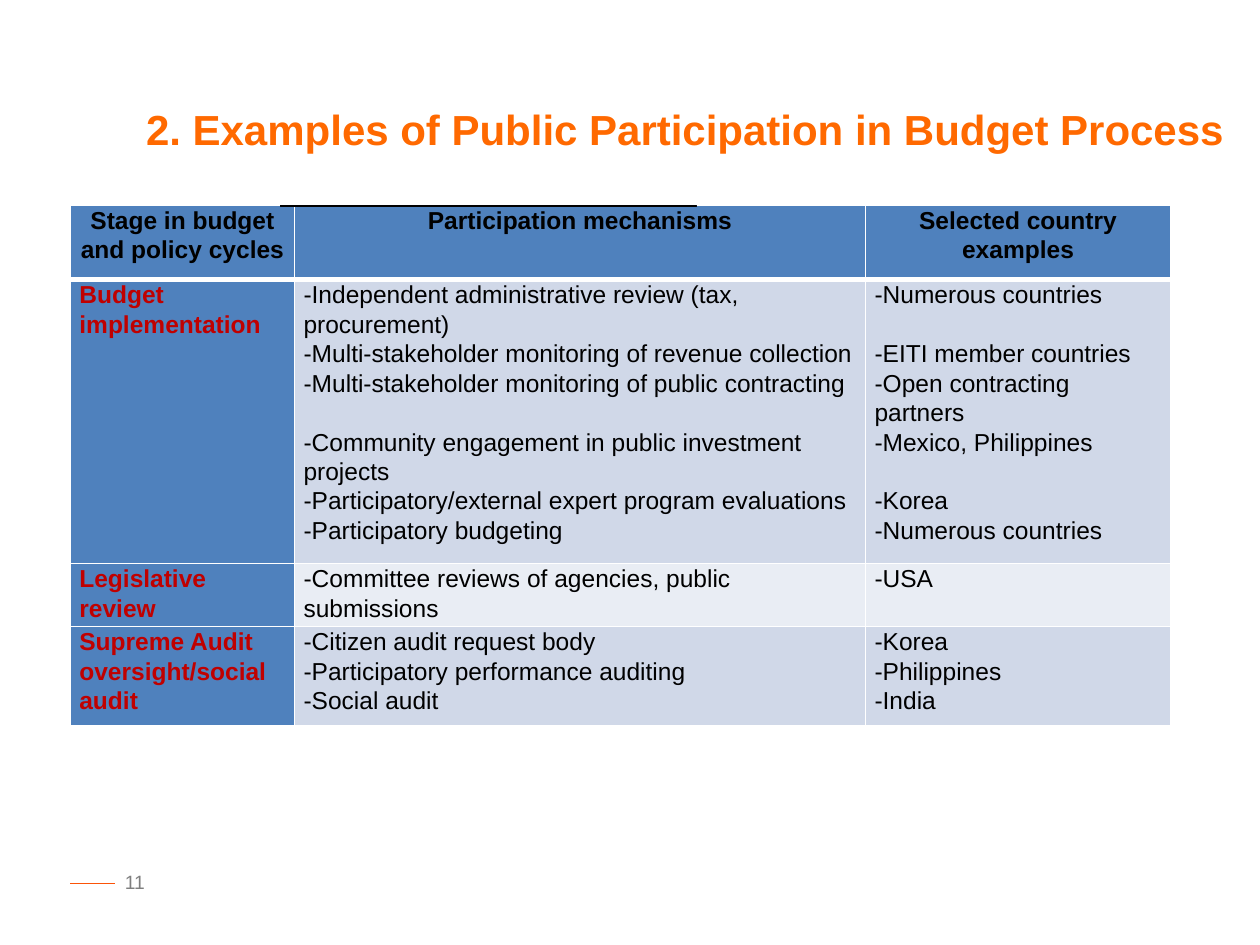
from dataclasses import dataclass

from lxml import etree
from pptx import Presentation
from pptx.dml.color import RGBColor
from pptx.enum.shapes import MSO_CONNECTOR, MSO_SHAPE
from pptx.enum.text import MSO_ANCHOR, MSO_AUTO_SIZE, PP_ALIGN
from pptx.oxml.ns import qn
from pptx.util import Cm, Pt

LEFT, CENTER, RIGHT = PP_ALIGN.LEFT, PP_ALIGN.CENTER, PP_ALIGN.RIGHT
TOP = MSO_ANCHOR.TOP
NO_AUTOFIT = MSO_AUTO_SIZE.NONE
STRAIGHT = MSO_CONNECTOR.STRAIGHT
RECTANGLE = MSO_SHAPE.RECTANGLE
TITLE_ONLY_LAYOUT = 5


@dataclass(frozen=True)
class Theme:
    font: str = "Arial"
    title_size: float = 24
    table_size: float = 14
    number_size: float = 11
    line_spacing: float = 1.07
    line_gap: float = 16.8  # height of one table text line
    title: str = "FF6900"
    accent: str = "FB5308"
    number: str = "7F7F7F"
    text: str = "000000"
    stage: str = "C00000"
    header_fill: str = "4F81BD"
    band_fills: tuple = ("D0D8E8", "E9EDF4")
    border: str = "FFFFFF"


THEME = Theme()

COLUMN_WIDTHS = (4.52, 11.51, 6.15)
ROW_HEIGHTS = (1.5, 5.72, 1.27, 2.01)
HEADERS = (
    "Stage in budget and policy cycles",
    "Participation mechanisms",
    "Selected country examples",
)
# Each row: stage, mechanisms, countries; GAP leaves one line free
GAP = None
STAGES = (
    (
        ["Budget implementation"],
        [
            "-Independent administrative review (tax, procurement)",
            "-Multi-stakeholder monitoring of revenue collection",
            "-Multi-stakeholder monitoring of public contracting",
            GAP,
            "-Community engagement in public investment projects",
            "-Participatory/external expert program evaluations",
            "-Participatory budgeting",
        ],
        [
            "-Numerous countries",
            GAP,
            "-EITI member countries",
            "-Open contracting partners",
            "-Mexico, Philippines",
            GAP,
            "-Korea",
            "-Numerous countries",
        ],
    ),
    (
        ["Legislative review"],
        ["-Committee reviews of agencies, public submissions"],
        ["-USA"],
    ),
    (
        ["Supreme Audit oversight/social audit"],
        [
            "-Citizen audit request body",
            "-Participatory performance auditing",
            "-Social audit",
        ],
        ["-Korea", "-Philippines", "-India"],
    ),
)


def rgb(color):
    return RGBColor.from_string(color)


def style_paragraph(paragraph, size, color, bold=False, align=LEFT):
    paragraph.alignment = align
    font = paragraph.font
    font.name, font.size, font.bold = THEME.font, Pt(size), bold
    font.color.rgb = rgb(color)


def add_title(slide, text):
    title = slide.shapes.title
    title.left, title.top, title.width, title.height = Cm(2.69), Cm(1.96), Cm(22.68), Cm(2.31)
    frame = title.text_frame
    frame.text = text
    frame.word_wrap = False
    frame.auto_size = NO_AUTOFIT
    frame.vertical_anchor = TOP
    style_paragraph(frame.paragraphs[0], THEME.title_size, THEME.title, bold=True)


def add_page_number(slide, number):
    # Short accent line beside the number
    line = slide.shapes.add_connector(STRAIGHT, Cm(2.31), Cm(17.81), Cm(1.42), Cm(17.81))
    line.line.color.rgb = rgb(THEME.accent)
    line.line.width = Pt(0.75)
    etree.SubElement(line._element.spPr, qn("a:effectLst"))

    box = slide.shapes.add_textbox(Cm(1.27), Cm(17.42), Cm(1.9), Cm(1.02))
    frame = box.text_frame
    frame.word_wrap = True
    frame.text = number
    style_paragraph(frame.paragraphs[0], THEME.number_size, THEME.number, align=RIGHT)


def set_borders(cell, top=1, bottom=1):
    properties = cell._tc.get_or_add_tcPr()
    for side, width in (("L", 1), ("R", 1), ("T", top), ("B", bottom)):
        line = etree.SubElement(properties, qn(f"a:ln{side}"), w=str(Pt(width)))
        fill = etree.SubElement(line, qn("a:solidFill"))
        etree.SubElement(fill, qn("a:srgbClr"), val=THEME.border)


def fill_cell(cell, lines, fill, color=THEME.text, bold=False, align=LEFT, top=1, bottom=1):
    cell.margin_left = cell.margin_right = Cm(0.18)
    cell.margin_top = cell.margin_bottom = 0
    set_borders(cell, top, bottom)
    cell.fill.solid()
    cell.fill.fore_color.rgb = rgb(fill)

    paragraph = cell.text_frame.paragraphs[0]
    gap_before = False
    for index, text in enumerate(lines):
        if text is GAP:
            gap_before = True
            continue
        if index:
            paragraph = cell.text_frame.add_paragraph()
        paragraph.text = text
        paragraph.line_spacing = THEME.line_spacing
        if gap_before:
            paragraph.space_before = Pt(THEME.line_gap)
            gap_before = False
        style_paragraph(paragraph, THEME.table_size, color, bold, align)


def add_stage_table(slide):
    table = slide.shapes.add_table(
        len(ROW_HEIGHTS), len(COLUMN_WIDTHS), Cm(1.42), Cm(4.14),
        Cm(sum(COLUMN_WIDTHS)), Cm(sum(ROW_HEIGHTS)),
    ).table
    for column, width in zip(table.columns, COLUMN_WIDTHS):
        column.width = Cm(width)
    for row, height in zip(table.rows, ROW_HEIGHTS):
        row.height = Cm(height)

    # Header row with a thick rule below
    for column, header in enumerate(HEADERS):
        fill_cell(table.cell(0, column), [header], THEME.header_fill,
                  bold=True, align=CENTER, bottom=3)

    # Stage rows with alternating bands
    for row, (stage, *details) in enumerate(STAGES, start=1):
        top = 3 if row == 1 else 1
        fill_cell(table.cell(row, 0), stage, THEME.header_fill, THEME.stage, bold=True, top=top)
        band = THEME.band_fills[(row - 1) % 2]
        for column, lines in enumerate(details, start=1):
            fill_cell(table.cell(row, column), lines, band, top=top)


def add_rule(slide):
    rule = slide.shapes.add_shape(RECTANGLE, Cm(5.66), Cm(4.14), Cm(8.38), Cm(0.03))
    rule.shadow.inherit = False
    rule.fill.solid()
    rule.fill.fore_color.rgb = rgb(THEME.text)
    rule.line.color.rgb = rgb(THEME.text)
    rule.line.width = Pt(0.75)


def main():
    presentation = Presentation()
    presentation.slide_width, presentation.slide_height = Cm(25.4), Cm(19.05)
    slide = presentation.slides.add_slide(presentation.slide_layouts[TITLE_ONLY_LAYOUT])
    add_page_number(slide, "11")
    add_title(slide, "2. Examples of Public Participation in Budget Process")
    add_stage_table(slide)
    add_rule(slide)
    presentation.save("out.pptx")


if __name__ == "__main__":
    main()
